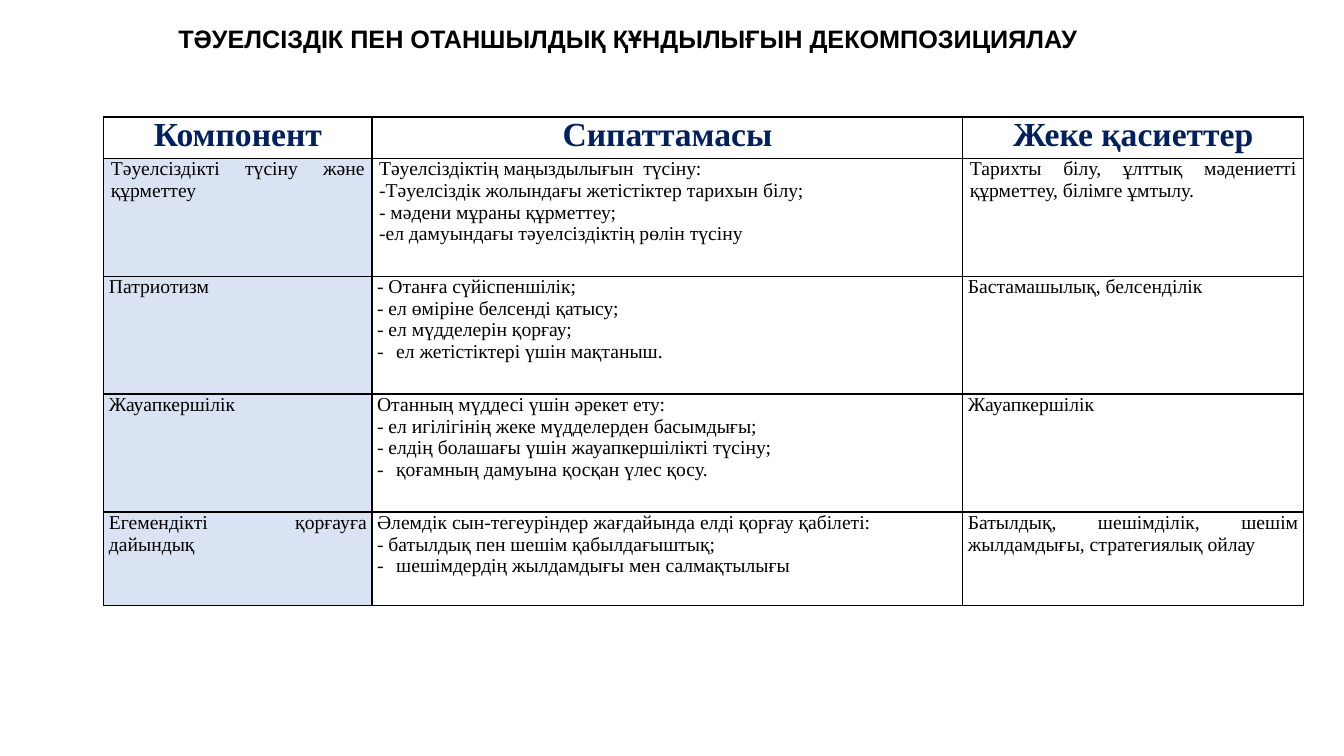
from lxml.etree import SubElement
from pptx import Presentation
from pptx.dml.color import RGBColor
from pptx.enum.text import PP_ALIGN
from pptx.oxml.ns import qn
from pptx.util import Inches, Pt

COLORS = {"black": "000000", "navy": "002060", "pale": "DAE3F3"}
TITLE = {"name": "Arial", "size": Pt(18), "bold": True}
HEADER = {"name": "Times New Roman", "size": Pt(24), "bold": True}
BODY = {"name": "Times New Roman", "size": Pt(14), "bold": False}
BULLET = "•"

TITLE_TEXT = "ТӘУЕЛСІЗДІК ПЕН ОТАНШЫЛДЫҚ ҚҰНДЫЛЫҒЫН ДЕКОМПОЗИЦИЯЛАУ"
HEADINGS = ["Компонент", "Сипаттамасы", "Жеке қасиеттер"]
COMPONENTS = [
    ["Тәуелсіздікті түсіну және құрметтеу",
     "Тәуелсіздіктің маңыздылығын  түсіну:\n"
     "-Тәуелсіздік жолындағы жетістіктер тарихын білу;\n"
     "- мәдени мұраны құрметтеу;\n"
     "-ел дамуындағы тәуелсіздіктің рөлін түсіну",
     "Тарихты білу, ұлттық мәдениетті құрметтеу, білімге ұмтылу."],
    ["Патриотизм",
     "- Отанға сүйіспеншілік;\n"
     "- ел өміріне белсенді қатысу;\n"
     "- ел мүдделерін қорғау;\n"
     "•ел жетістіктері үшін мақтаныш.",
     "Бастамашылық, белсенділік"],
    ["Жауапкершілік",
     "Отанның мүддесі үшін әрекет ету:\n"
     "- ел игілігінің жеке мүдделерден басымдығы;\n"
     "- елдің болашағы үшін жауапкершілікті түсіну;\n"
     "•қоғамның дамуына қосқан үлес қосу.",
     "Жауапкершілік"],
    ["Егемендікті қорғауға дайындық",
     "Әлемдік сын-тегеуріндер жағдайында елді қорғау қабілеті:\n"
     "- батылдық пен шешім қабылдағыштық;\n"
     "•шешімдердің жылдамдығы мен салмақтылығы",
     "Батылдық, шешімділік, шешім жылдамдығы, стратегиялық ойлау"],
]
COL_WIDTHS = [2.66, 5.86, 3.38]
ROW_HEIGHTS = [0.41, 1.17, 1.17, 1.17, 0.93]


class SlideBuilder:
    def __init__(self, prs):
        self.slide = prs.slides.add_slide(prs.slide_layouts[6])

    def text(self, p, text, style, color, align):
        p.alignment = align
        r = p.add_run()
        r.text = text
        for key, value in style.items():
            setattr(r.font, key, value)
        r.font.color.rgb = RGBColor.from_string(COLORS[color])

    def title(self, text, left, top, width, height):
        sp = self.slide.shapes.add_textbox(
            Inches(left), Inches(top), Inches(width), Inches(height))
        tf = sp.text_frame
        tf.word_wrap = True
        self.text(tf.paragraphs[0], text, TITLE, "black", PP_ALIGN.LEFT)

    def dash(self, p):
        pPr = p._p.get_or_add_pPr()
        pPr.set("marL", str(Inches(0.19)))
        pPr.set("indent", str(-Inches(0.19)))
        SubElement(pPr, qn("a:buFont"), typeface="Times New Roman")
        SubElement(pPr, qn("a:buChar"), char="-")

    def borders(self, cell):
        tcPr = cell._tc.get_or_add_tcPr()
        for side in ("lnL", "lnR", "lnT", "lnB"):
            ln = SubElement(tcPr, qn(f"a:{side}"), w=str(Pt(1)))
            fill = SubElement(ln, qn("a:solidFill"))
            SubElement(fill, qn("a:srgbClr"), val=COLORS["black"])

    def cell(self, cell, text, style, color, align, inset, fill=None):
        margins = {"margin_left": inset, "margin_right": inset,
                   "margin_top": 0, "margin_bottom": 0}
        for key, value in margins.items():
            setattr(cell, key, Inches(value))
        self.borders(cell)
        if fill:
            cell.fill.solid()
            cell.fill.fore_color.rgb = RGBColor.from_string(COLORS[fill])
        else:
            cell.fill.background()
        tf = cell.text_frame
        for i, line in enumerate(text.split("\n")):
            p = tf.add_paragraph() if i else tf.paragraphs[0]
            self.text(p, line.removeprefix(BULLET), style, color, align)
            if line.startswith(BULLET):
                self.dash(p)

    def table(self, left, top):
        rows = [HEADINGS] + COMPONENTS
        table = self.slide.shapes.add_table(
            len(rows), len(HEADINGS), Inches(left), Inches(top),
            Inches(sum(COL_WIDTHS)), Inches(sum(ROW_HEIGHTS))).table
        for column, width in zip(table.columns, COL_WIDTHS):
            column.width = Inches(width)
        for i, (texts, height) in enumerate(zip(rows, ROW_HEIGHTS)):
            table.rows[i].height = Inches(height)
            for j, text in enumerate(texts):
                cell = table.cell(i, j)
                inset = 0.07 if i < 2 else 0.05
                if i == 0:
                    self.cell(cell, text, HEADER, "navy", PP_ALIGN.CENTER, inset)
                else:
                    self.cell(cell, text, BODY, "black", PP_ALIGN.JUSTIFY,
                              inset, "pale" if j == 0 else None)


def main():
    prs = Presentation()
    prs.slide_width, prs.slide_height = Inches(13.33), Inches(7.5)
    s = SlideBuilder(prs)
    s.title(TITLE_TEXT, 1.67, 0.18, 9.48, 0.4)
    s.table(1.03, 1.16)
    prs.save("out.pptx")


if __name__ == "__main__":
    main()
